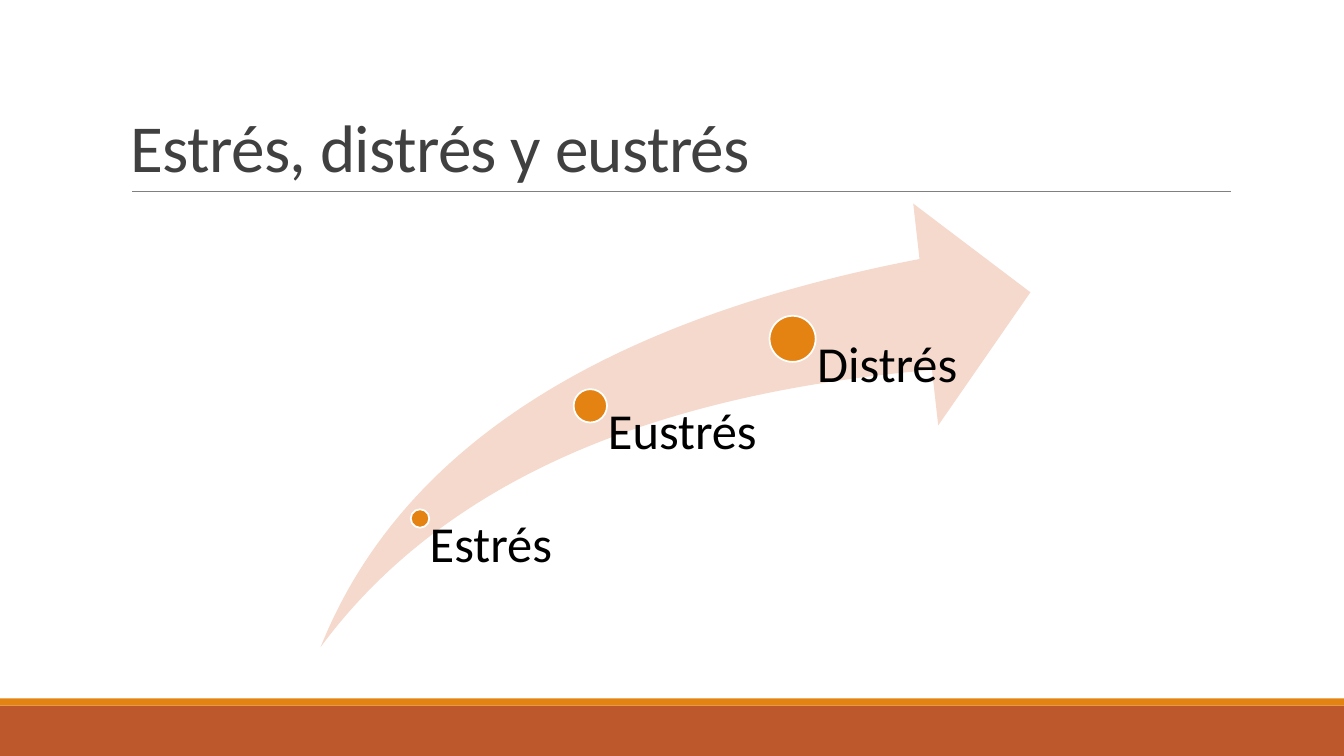
from pptx import Presentation
from pptx import util as u
from pptx.dml.color import RGBColor
from pptx.enum import shapes, text
from lxml import etree

# Content
SLIDE_W, SLIDE_H = 13.33, 7.5
HEADING = "Estrés, distrés y eustrés"
FOOTER_BANDS = [(7, 0.5, "BD582C"), (6.93, 0.07, "E48312")]  # top, height, fill
ARROW = (3.18, 2.02, 7.04, 4.4)  # left, top, width, height
# label, centre across and down, dot size, label width (shares of the arrow)
STAGES = [
    ("Estrés", 0.14, 0.71, 0.026, 0.233),
    ("Eustrés", 0.38, 0.456, 0.047, 0.24),
    ("Distrés", 0.665, 0.305, 0.065, 0.24),
]
SHAPE = shapes.MSO_SHAPE

prs = Presentation()
prs.slide_width, prs.slide_height = u.Inches(SLIDE_W), u.Inches(SLIDE_H)
slide = prs.slides.add_slide(prs.slide_layouts[6])


def color(value):
    return RGBColor.from_string(value)


def add_figure(preset, box, fill, line=None):
    figure = slide.shapes.add_shape(preset, *map(u.Inches, box))
    figure.shadow.inherit = False
    figure.fill.solid()
    figure.fill.fore_color.rgb = color(fill)
    if line:
        figure.line.color.rgb = color(line)
        figure.line.width = u.Pt(1.25)
    else:
        figure.line.fill.background()
    return figure


def add_text(words, box, size, ink="000000", insets=(0, 0, 0, 0), leading=0.9,
             anchor=text.MSO_ANCHOR.TOP, tracking=None):
    frame = slide.shapes.add_textbox(*map(u.Inches, box)).text_frame
    frame.word_wrap = True
    frame.vertical_anchor = anchor
    (frame.margin_left, frame.margin_top,
     frame.margin_right, frame.margin_bottom) = map(u.Inches, insets)
    paragraph = frame.paragraphs[0]
    paragraph.line_spacing = leading
    run = paragraph.add_run()
    run.text = words
    run.font.name, run.font.size = "Calibri", u.Pt(size)
    run.font.color.rgb = color(ink)
    if tracking:
        run.font._element.set("spc", str(int(tracking * 100)))


# Footer bands
for top, height, fill in FOOTER_BANDS:
    add_figure(SHAPE.RECTANGLE, (0, top, SLIDE_W, height), fill)

# Heading and the rule under it
rule = slide.shapes.add_connector(
    shapes.MSO_CONNECTOR.STRAIGHT, *map(u.Inches, (1.31, 1.9, 12.21, 1.9)))
rule.line.color.rgb = color("808080")
rule.line.width = u.Pt(0.5)
etree.SubElement(
    rule._element.spPr,
    "{http://schemas.openxmlformats.org/drawingml/2006/main}effectLst")
add_text(HEADING, (1.2, 0.31, 11, 1.59), 48, ink="404040",
         insets=(0.1, 0.05, 0.1, 0.05), leading=0.85,
         anchor=text.MSO_ANCHOR.BOTTOM, tracking=-0.5)

# Rising arrow
left, top, width, height = ARROW
swoosh = add_figure(SHAPE.SWOOSH_ARROW, ARROW, "F5D9CC")
swoosh.adjustments[0] = swoosh.adjustments[1] = 0.25

# Stages: a dot on the arrow, its label from the dot's centre down to the base
for label, across, down, dot_share, label_share in STAGES:
    x, y, dot = left + across * width, top + down * height, dot_share * width
    add_figure(SHAPE.OVAL, (x - dot / 2, y - dot / 2, dot, dot), "E48312", "FFFFFF")
    add_text(label, (x, y, label_share * width, top + height - y), 36,
             insets=(0.53 * dot, 0, 0, 0))

prs.save("out.pptx")
